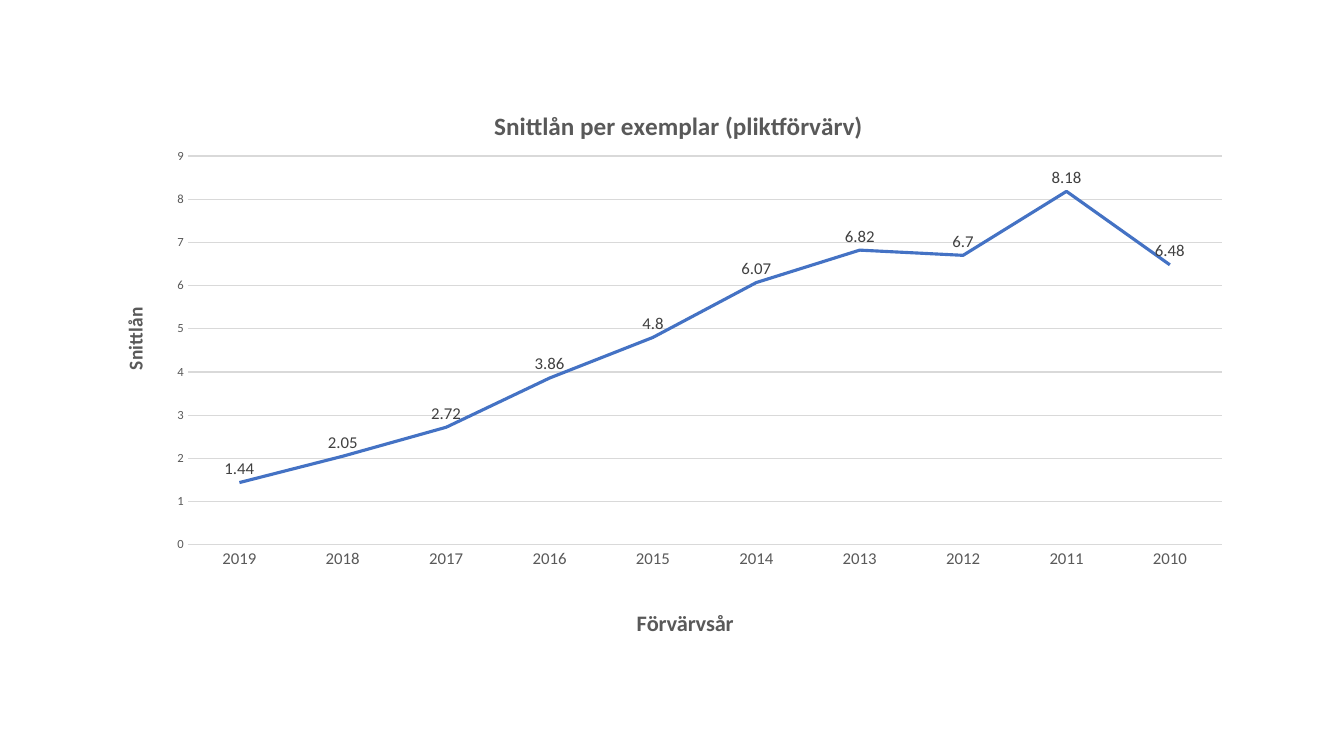
from dataclasses import dataclass
from typing import Any

from lxml.etree import SubElement, Element
from pptx import Presentation
from pptx.chart.data import CategoryChartData as Data
from pptx.dml.color import RGBColor
from pptx.enum.chart import XL_CHART_TYPE as Kind, XL_LABEL_POSITION as Spot
from pptx.enum.chart import XL_TICK_MARK as Tick
from pptx.oxml.ns import qn
from pptx.util import Inches, Pt

FACE = "Calibri"
GRAY = "595959"
PALE = "D9D9D9"
BLUE = "4472C4"
DARK = "404040"
WIDE, HIGH = Inches(13.33), Inches(7.5)
LOANS = [1.44, 2.05, 2.72, 3.86, 4.8, 6.07, 6.82, 6.7, 8.18, 6.48]
YEARS = [str(2019 - step) for step in range(len(LOANS))]


@dataclass(frozen=True)
class Head:
    text: str
    size: int
    left: float
    top: float


MAIN = Head("Snittlån per exemplar (pliktförvärv)", 18, 0.34, 0.04)
YEAR = Head("Förvärvsår", 16, 0.465, 0.94)
LOAN = Head("Snittlån", 14, 0.015, 0.4)


def color(code: str) -> RGBColor:
    return RGBColor.from_string(code)


def style(font: Any, size: float, code: str, bold: bool = False) -> None:
    font.name = FACE
    font.size = Pt(size)
    font.bold = bold
    font.color.rgb = color(code)


def stroke(line: Any, code: str, width: float) -> None:
    line.color.rgb = color(code)
    line.width = Pt(width)


def place(node: Any, index: int, **parts: Any) -> None:
    old = node.find(qn("c:layout"))
    if old is not None:
        node.remove(old)
    layout = Element(qn("c:layout"))
    node.insert(index, layout)
    manual = SubElement(layout, qn("c:manualLayout"))
    for name, value in parts.items():
        SubElement(manual, qn(f"c:{name}")).set("val", str(value))


def title(owner: Any, node: str, head: Head) -> None:
    owner.has_title = True
    frame = (owner.chart_title if node == "c:chart" else owner.axis_title).text_frame
    frame.text = head.text
    style(frame.paragraphs[0].font, head.size, GRAY, True)
    found = chart.element.xpath(f".//{node}/c:title")[0]
    place(found, 1, xMode="edge", yMode="edge", x=head.left, y=head.top)


deck = Presentation()
deck.slide_width, deck.slide_height = WIDE, HIGH
slide = deck.slides.add_slide(deck.slide_layouts[6])

data = Data()
data.categories = YEARS
data.add_series("Series 1", LOANS)
chart = slide.shapes.add_chart(
    Kind.LINE,
    int(WIDE * 0.075), int(HIGH * 0.108), int(WIDE * 0.851), int(HIGH * 0.744),
    data,
).chart
chart.has_legend = False
style(chart.font, 10, "000000")

years, loans = chart.category_axis, chart.value_axis
for axis, size in ((years, 12), (loans, 9)):
    axis.major_tick_mark = axis.minor_tick_mark = Tick.NONE
    style(axis.tick_labels.font, size, GRAY)
years.has_major_gridlines = False
stroke(years.format.line, PALE, 0.75)
loans.minimum_scale, loans.maximum_scale, loans.major_unit = 0, 9, 1
loans.format.line.fill.background()
stroke(loans.major_gridlines.format.line, PALE, 0.75)

title(chart, "c:chart", MAIN)
title(years, "c:catAx", YEAR)
title(loans, "c:valAx", LOAN)
turn = chart.element.xpath(".//c:valAx/c:title//a:bodyPr")[0]
turn.set("rot", "-5400000")
turn.set("vert", "horz")

plot = chart.plots[0]
plot.vary_by_categories = False
curve = plot.series[0]
curve.smooth = False
stroke(curve.format.line, BLUE, 2.25)
labels = curve.data_labels
labels.show_value = True
labels.position = Spot.ABOVE
style(labels.font, 12, DARK)

area = chart.element.xpath(".//c:plotArea")[0]
place(area, 0, layoutTarget="inner", xMode="edge", yMode="edge",
      x=0.076, y=0.134, w=0.904, h=0.7)

deck.save("out.pptx")
